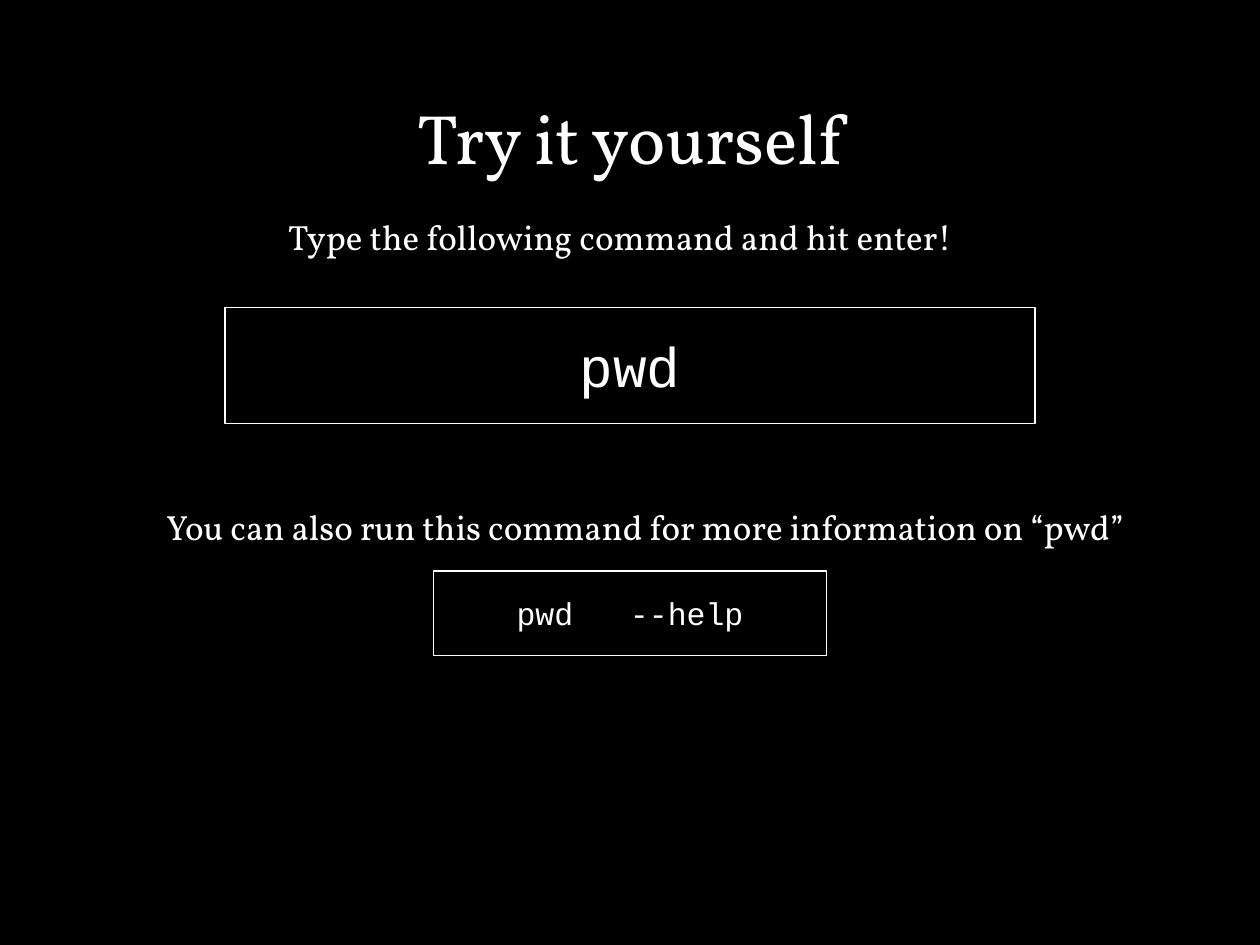
from dataclasses import dataclass

import pptx
import pptx.util
import pptx.dml.color
import pptx.enum.shapes
import pptx.enum.text
from pptx.util import Cm, Pt

BLACK = pptx.dml.color.RGBColor(0x00, 0x00, 0x00)
WHITE = pptx.dml.color.RGBColor(0xFF, 0xFF, 0xFF)
PROSE_FONT = "Vollkorn"
CODE_FONT = "Courier New"
SLIDE_WIDTH = 25.4
SLIDE_HEIGHT = 19.05

ALIGN = pptx.enum.text.PP_ALIGN
ANCHOR = pptx.enum.text.MSO_ANCHOR
AUTO_SIZE = pptx.enum.text.MSO_AUTO_SIZE


@dataclass
class Command:
    """A framed command, centred across the slide; lengths in cm."""
    text: str
    top: float
    width: float
    height: float
    size: int


@dataclass
class Instruction:
    text: str
    left: float
    top: float
    width: float


COMMANDS = [
    Command("pwd", 6.2, 16.33, 2.34, 32),
    Command("pwd   --help", 11.51, 7.92, 1.7, 18),
]
INSTRUCTIONS = [
    Instruction("Type the following command and hit enter!", 5.56, 4.22, 14.25),
    Instruction("You can also run this command for more information on “pwd”",
                3.1, 10.06, 20.55),
]


def place_centred(sp, top: float, width: float, height: float) -> None:
    sp.left, sp.top = Cm((SLIDE_WIDTH - width) / 2), Cm(top)
    sp.width, sp.height = Cm(width), Cm(height)


def write_text(tf, text: str, *, font: str, size: int, align=ALIGN.LEFT,
               anchor=ANCHOR.TOP, auto_size=AUTO_SIZE.NONE,
               line_spacing: float = 1.0) -> None:
    tf.word_wrap = True
    tf.auto_size = auto_size
    tf.vertical_anchor = anchor
    p = tf.paragraphs[0]
    p.alignment = align
    p.line_spacing = line_spacing
    r = p.add_run()
    r.text = text
    r.font.name = font
    r.font.size = Pt(size)
    r.font.color.rgb = WHITE


def add_title(slide, text: str) -> None:
    sp = slide.shapes.title
    place_centred(sp, 1.02, 21.89, 3.68)
    write_text(sp.text_frame, text, font=PROSE_FONT, size=40,
               align=ALIGN.CENTER, anchor=ANCHOR.MIDDLE, line_spacing=0.9)


def add_command(slide, command: Command) -> None:
    sp = slide.shapes.add_shape(
        pptx.enum.shapes.MSO_SHAPE.RECTANGLE, 0, 0, 0, 0)
    place_centred(sp, command.top, command.width, command.height)
    sp.shadow.inherit = False
    sp.fill.background()
    sp.line.color.rgb = WHITE
    sp.line.width = Pt(0.75)
    write_text(sp.text_frame, command.text, font=CODE_FONT, size=command.size,
               align=ALIGN.CENTER, anchor=ANCHOR.MIDDLE)


def add_instruction(slide, item: Instruction) -> None:
    sp = slide.shapes.add_textbox(
        Cm(item.left), Cm(item.top), Cm(item.width), Cm(1.12))
    write_text(sp.text_frame, item.text, font=PROSE_FONT, size=20,
               auto_size=AUTO_SIZE.SHAPE_TO_FIT_TEXT)


def main() -> None:
    prs = pptx.Presentation()
    prs.slide_width, prs.slide_height = Cm(SLIDE_WIDTH), Cm(SLIDE_HEIGHT)
    title_only = prs.slide_layouts[5]
    slide = prs.slides.add_slide(title_only)
    slide.background.fill.solid()
    slide.background.fill.fore_color.rgb = BLACK

    add_title(slide, "Try it yourself")
    for command in COMMANDS:
        add_command(slide, command)
    for item in INSTRUCTIONS:
        add_instruction(slide, item)
    prs.save("out.pptx")


if __name__ == "__main__":
    main()
